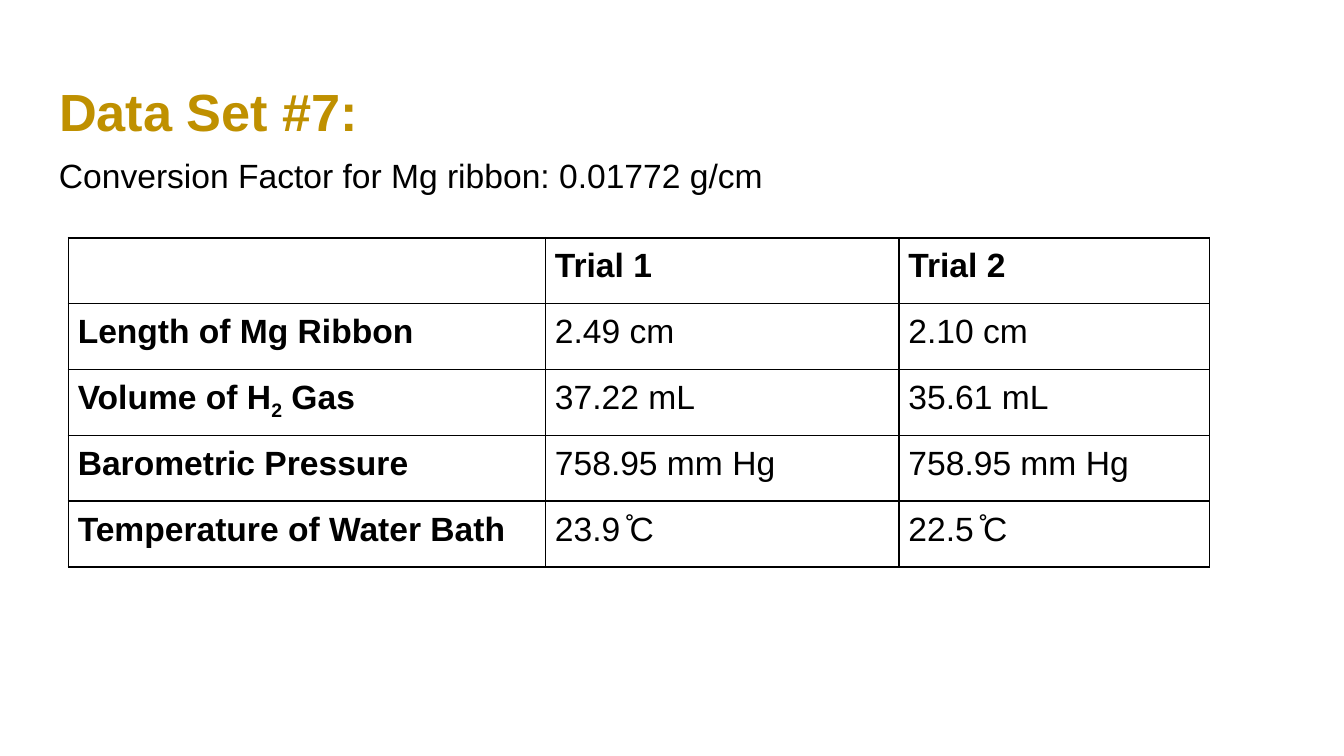
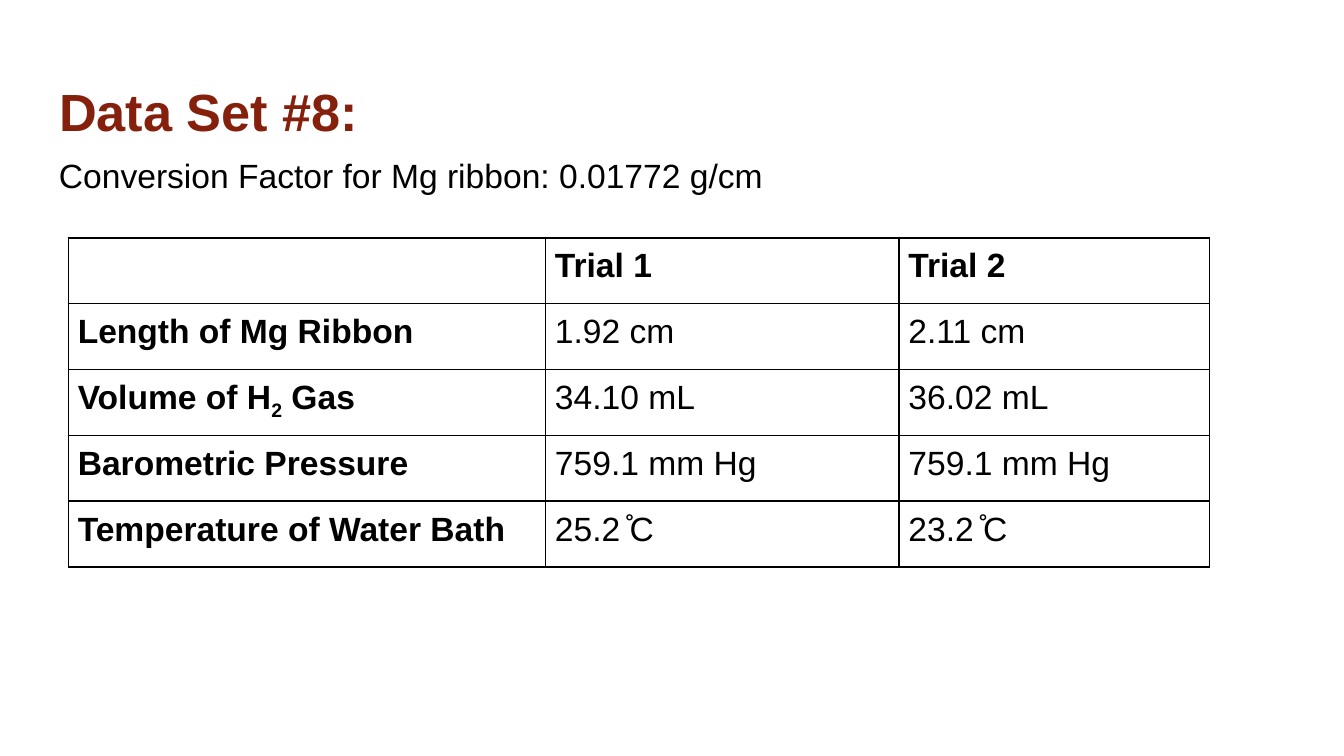
import pptx
import pptx.dml.color
import pptx.enum.text
import pptx.oxml
import pptx.oxml.ns
import pptx.util

Pt = pptx.util.Pt

LEFT, WIDTH, BOX_HEIGHT = 24.5, 671, 45.4
TITLE_TOP, FACTOR_TOP = 35.3, 72.7
TABLE_LEFT, TABLE_TOP = 36.7, 127.4
COLUMN_WIDTHS = [255.6, 189.4, 166.3]
ROW_HEIGHT = 35.3
BLACK = "000000"

HEADINGS = ("", "Trial 1", "Trial 2")
MEASUREMENTS = (
    "Length of Mg Ribbon",
    "Volume of H_2_ Gas",
    "Barometric Pressure",
    "Temperature of Water Bath",
)
DATA_SETS = [
    ("Data Set #7:", "BF9000", [
        ("2.49 cm", "2.10 cm"),
        ("37.22 mL", "35.61 mL"),
        ("758.95 mm Hg", "758.95 mm Hg"),
        ("23.9 ̊C", "22.5 ̊C"),
    ]),
    ("Data Set #8:", "85200C", [
        ("1.92 cm", "2.11 cm"),
        ("34.10 mL", "36.02 mL"),
        ("759.1 mm Hg", "759.1 mm Hg"),
        ("25.2 ̊C", "23.2 ̊C"),
    ]),
]


def color(hex_string):
    return pptx.dml.color.RGBColor.from_string(hex_string)


class Deck:
    font_name = "Arial"
    text_size = 18
    title_size = 28
    box_margin = 7.2
    cell_margin = 5

    def __init__(self):
        self.presentation = pptx.Presentation()
        self.presentation.slide_width = Pt(720)
        self.presentation.slide_height = Pt(405)
        self.slide = None

    def add_slide(self):
        layout = self.presentation.slide_layouts[5]
        self.slide = self.presentation.slides.add_slide(layout)

    def style(self, paragraph, size, hex_string=BLACK, bold=False):
        paragraph.alignment = pptx.enum.text.PP_ALIGN.LEFT
        paragraph.font.name = self.font_name
        paragraph.font.size = Pt(size)
        paragraph.font.bold = bold
        paragraph.font.color.rgb = color(hex_string)

    def set_margins(self, target, margin):
        target.margin_left = target.margin_right = Pt(margin)
        target.margin_top = target.margin_bottom = Pt(margin)

    def fill_frame(self, shape, text):
        frame = shape.text_frame
        frame.word_wrap = True
        frame.auto_size = pptx.enum.text.MSO_AUTO_SIZE.NONE
        frame.vertical_anchor = pptx.enum.text.MSO_ANCHOR.TOP
        self.set_margins(frame, self.box_margin)
        frame.text = text
        return frame.paragraphs[0]

    def title(self, text, hex_string):
        shape = self.slide.shapes.title
        shape.left, shape.top = Pt(LEFT), Pt(TITLE_TOP)
        shape.width, shape.height = Pt(WIDTH), Pt(BOX_HEIGHT)
        paragraph = self.fill_frame(shape, text)
        self.style(paragraph, self.title_size, hex_string, bold=True)

    def text(self, text, top):
        shape = self.slide.shapes.add_textbox(
            Pt(LEFT), Pt(top), Pt(WIDTH), Pt(BOX_HEIGHT))
        paragraph = self.fill_frame(shape, text)
        paragraph.line_spacing = 1.15
        self.style(paragraph, self.text_size)

    def table(self, rows):
        shape = self.slide.shapes.add_table(
            len(rows), len(COLUMN_WIDTHS), Pt(TABLE_LEFT), Pt(TABLE_TOP),
            Pt(sum(COLUMN_WIDTHS)), Pt(ROW_HEIGHT * len(rows)))
        table = shape.table
        table.first_row = table.horz_banding = False
        for column, width in zip(table.columns, COLUMN_WIDTHS):
            column.width = Pt(width)
        for row_index, values in enumerate(rows):
            table.rows[row_index].height = Pt(ROW_HEIGHT)
            for column_index, value in enumerate(values):
                bold = row_index == 0 or column_index == 0
                self.cell(table.cell(row_index, column_index), value, bold)

    def cell(self, cell, text, bold):
        self.set_margins(cell, self.cell_margin)
        cell.vertical_anchor = pptx.enum.text.MSO_ANCHOR.TOP
        paragraph = cell.text_frame.paragraphs[0]
        self.style(paragraph, self.text_size, bold=bold)
        if text:
            for index, part in enumerate(text.split("_")):
                run = paragraph.add_run()
                run.text = part
                if index % 2:
                    run._r.get_or_add_rPr().set("baseline", "-25000")
        self.borders(cell)
        cell.fill.background()

    def borders(self, cell):
        properties = cell._tc.get_or_add_tcPr()
        namespace = pptx.oxml.ns.nsdecls("a")
        for side in "LRTB":
            properties.append(pptx.oxml.parse_xml(
                f'<a:ln{side} {namespace} w="{Pt(1)}"><a:solidFill>'
                f'<a:srgbClr val="{BLACK}"/></a:solidFill></a:ln{side}>'))


def main():
    deck = Deck()
    for title, title_color, trials in DATA_SETS:
        deck.add_slide()
        deck.title(title, title_color)
        deck.text("Conversion Factor for Mg ribbon: 0.01772 g/cm", FACTOR_TOP)
        rows = [(label, *values) for label, values in zip(MEASUREMENTS, trials)]
        deck.table([HEADINGS, *rows])
    deck.presentation.save("out.pptx")


if __name__ == "__main__":
    main()
